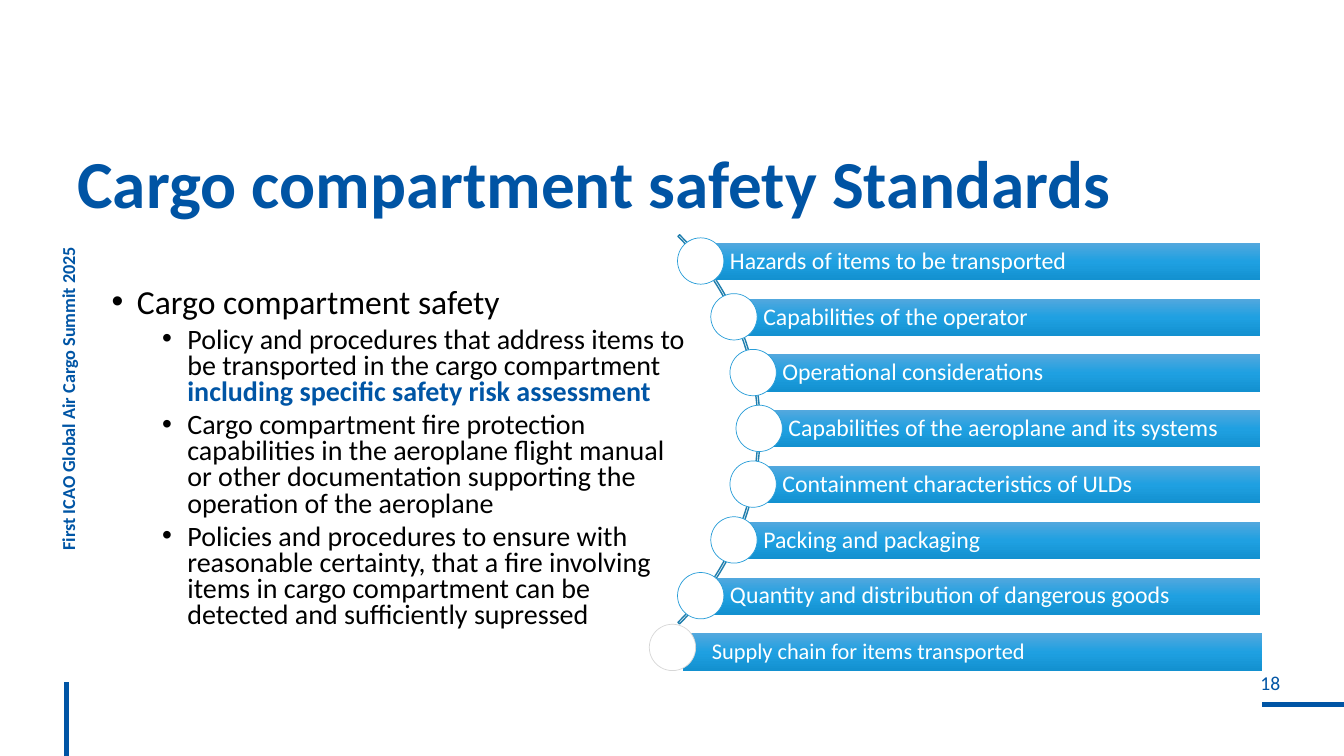
from copy import deepcopy
from lxml import etree
from pptx import Presentation, dml, util as u
from pptx.dml.color import RGBColor
from pptx.enum import shapes, text
from pptx.oxml.ns import qn

BLUE, BLACK, WHITE = "0055A5", "000000", "FFFFFF"


def hue(code):
    return RGBColor.from_string(code)


def add_run(para, words, size, code, bold=False):
    run = para.add_run()
    run.text = words
    run.font.name = "Calibri"
    run.font.size = u.Pt(size)
    run.font.bold = bold
    run.font.color.rgb = hue(code)


deck = Presentation()
deck.slide_width, deck.slide_height = u.Inches(13.33), u.Inches(7.5)
slide = deck.slides.add_slide(deck.slide_layouts[6])
items = slide.shapes

for x1, y1, x2, y2 in [(12.52, 6.99, 13.33, 6.99), (0.66, 6.77, 0.66, 7.5)]:
    rule = items.add_connector(shapes.MSO_CONNECTOR.STRAIGHT, u.Inches(x1),
                               u.Inches(y1), u.Inches(x2), u.Inches(y2))
    rule.line.color.rgb = hue(BLUE)
    rule.line.width = u.Pt(3)
    etree.SubElement(rule._element.spPr, qn("a:effectLst"))

page = items.add_textbox(u.Inches(12), u.Inches(6.66), u.Inches(1.2), u.Inches(0.33))
frame = page.text_frame
frame.margin_left = frame.margin_right = frame.margin_top = frame.margin_bottom = 0
frame.paragraphs[0].alignment = text.PP_ALIGN.CENTER
add_run(frame.paragraphs[0], "18", 14, BLUE)

heads = [
    (-1.87, 2.83, 5.14, 0.32, 270, "First ICAO Global Air Cargo Summit 2025", 13, BLUE),
    (0.67, 1.44, 12, 1.25, 0, "Cargo compartment safety Standards", 48, "0054A4"),
]
for left, top, width, height, turn, words, size, code in heads:
    box = items.add_textbox(u.Inches(left), u.Inches(top), u.Inches(width), u.Inches(height))
    box.rotation = turn
    box.text_frame.word_wrap = True
    para = box.text_frame.paragraphs[0]
    para.line_spacing = 0.9
    add_run(para, words, size, code, True)

points = [
    (0, [("Cargo compartment safety", BLACK)]),
    (1, [("Policy and procedures that address items to be transported in the "
          "cargo compartment ", BLACK),
         ("including specific safety risk assessment", BLUE)]),
    (1, [("Cargo compartment fire protection capabilities in the aeroplane flight "
          "manual or other documentation supporting the operation of the aeroplane", BLACK)]),
    (1, [("Policies and procedures to ensure with reasonable certainty, that a fire "
          "involving items in cargo compartment can be detected and sufficiently "
          "supressed", BLACK)]),
]
body = items.add_textbox(u.Inches(1.01), u.Inches(2.78), u.Inches(5.89), u.Inches(4.05))
frame = body.text_frame
frame.word_wrap = True
for i, (level, parts) in enumerate(points):
    para = frame.add_paragraph() if i else frame.paragraphs[0]
    para.level = level
    para.line_spacing = u.Pt(18.7) if level else 0.9
    if i:
        para.space_before = u.Pt(5)
    props = para._p.get_or_add_pPr()
    props.set("marL", str(u.Inches(0.25 + 0.5 * level)))
    props.set("indent", str(u.Inches(-0.25)))
    etree.SubElement(props, qn("a:buFont"), typeface="Arial")
    etree.SubElement(props, qn("a:buChar"), char="•")
    for words, code in parts:
        add_run(para, words, 20 if level else 24, code, code == BLUE)

arc = items.add_shape(shapes.MSO_SHAPE.BLOCK_ARC, u.Inches(2.08), u.Inches(1.53),
                      u.Inches(5.46), u.Inches(5.46))
for i, value in enumerate([189, 27, 0.004]):
    arc.adjustments[i] = value
arc.shadow.inherit = False
arc.fill.background()
arc.line.color.rgb = hue("207EAD")
arc.line.width = u.Pt(1)

rows = [
    (6.95, "Hazards of items to be transported"),
    (7.28, "Capabilities of the operator"),
    (7.47, "Operational considerations"),
    (7.53, "Capabilities of the aeroplane and its systems"),
    (7.47, "Containment characteristics of ULDs"),
    (7.28, "Packing and packaging"),
    (6.95, "Quantity and distribution of dangerous goods"),
    (6.77, "Supply chain for items transported"),
]
shades = [(0, "53A8DE"), (0.5, "1FA0E1"), (1, "1391D0")]
pitch = (5.73 - 2.41) / 6
for i, (left, words) in enumerate(rows):
    last = i == len(rows) - 1
    top = 2.41 + i * pitch
    right = 12.52 if last else 12.5
    bar = items.add_shape(shapes.MSO_SHAPE.RECTANGLE, u.Inches(left), u.Inches(top),
                          u.Inches(right - left), u.Inches(0.37))
    bar.shadow.inherit = False
    bar.line.fill.background()
    bar.fill.gradient()
    bar.fill.gradient_angle = 270
    stops = bar._element.spPr.find(".//" + qn("a:gsLst"))
    stops.insert(1, deepcopy(stops[0]))
    for stop, (place, code) in zip(bar.fill.gradient_stops, shades):
        stop.position = place
        stop.color.rgb = hue(code)
    frame = bar.text_frame
    frame.word_wrap = True
    frame.vertical_anchor = text.MSO_ANCHOR.MIDDLE
    frame.margin_left = u.Inches(0.29)
    frame.margin_right = frame.margin_top = frame.margin_bottom = u.Inches(0.05)
    para = frame.paragraphs[0]
    para.alignment = text.PP_ALIGN.LEFT
    para.line_spacing = 0.9
    add_run(para, words, 16 if last else 17, WHITE)

    shift, lift = (0.33, 0.09) if last else (0.23, 0.05)
    dot = items.add_shape(shapes.MSO_SHAPE.OVAL, u.Inches(left - shift),
                          u.Inches(top - lift), u.Inches(0.46), u.Inches(0.46))
    dot.shadow.inherit = False
    dot.fill.solid()
    dot.fill.fore_color.rgb = hue(WHITE)
    dot.line.color.rgb = hue("D7D7D7" if last else "289DD8")
    dot.line.width = u.Pt(0.5)

deck.save("out.pptx")
